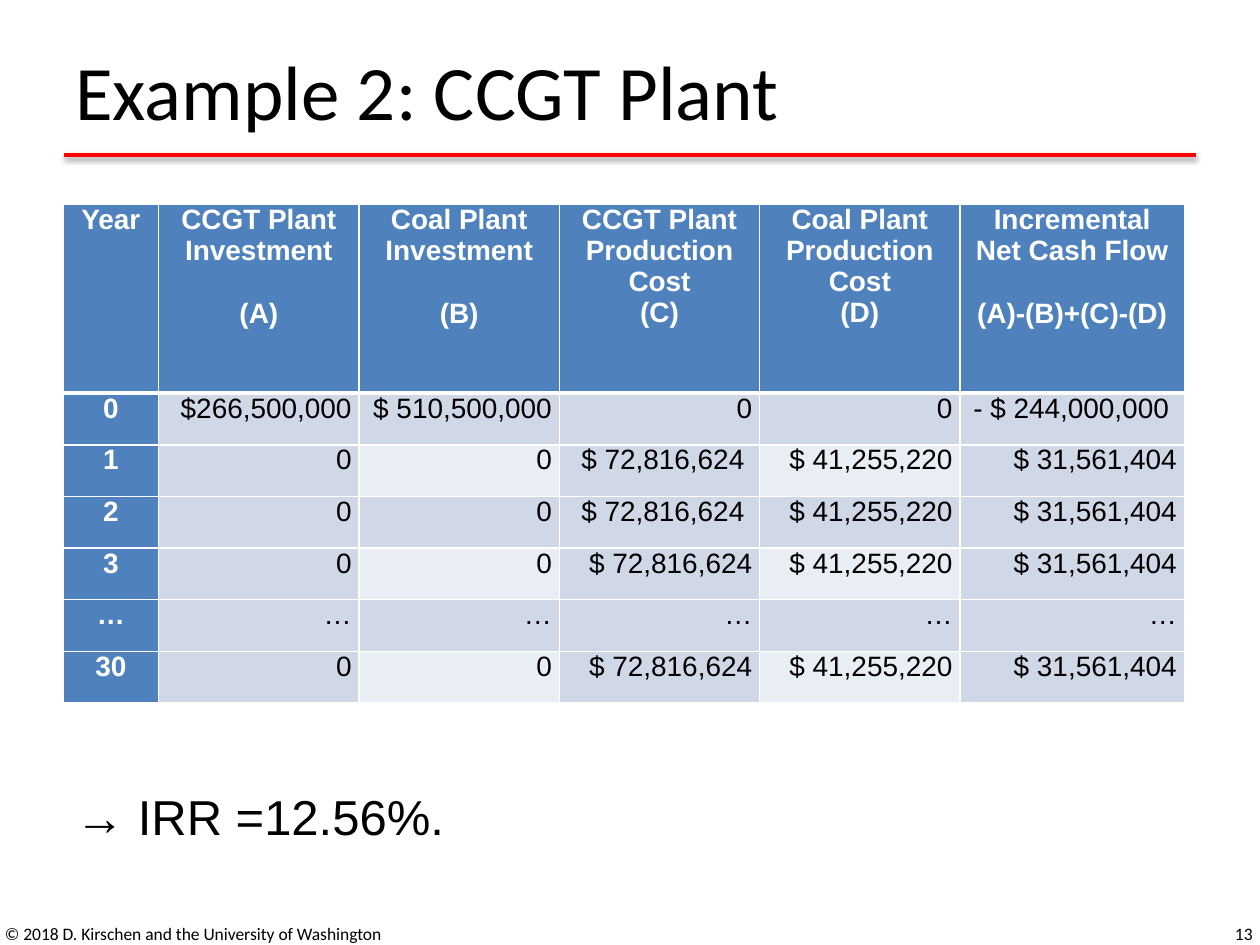
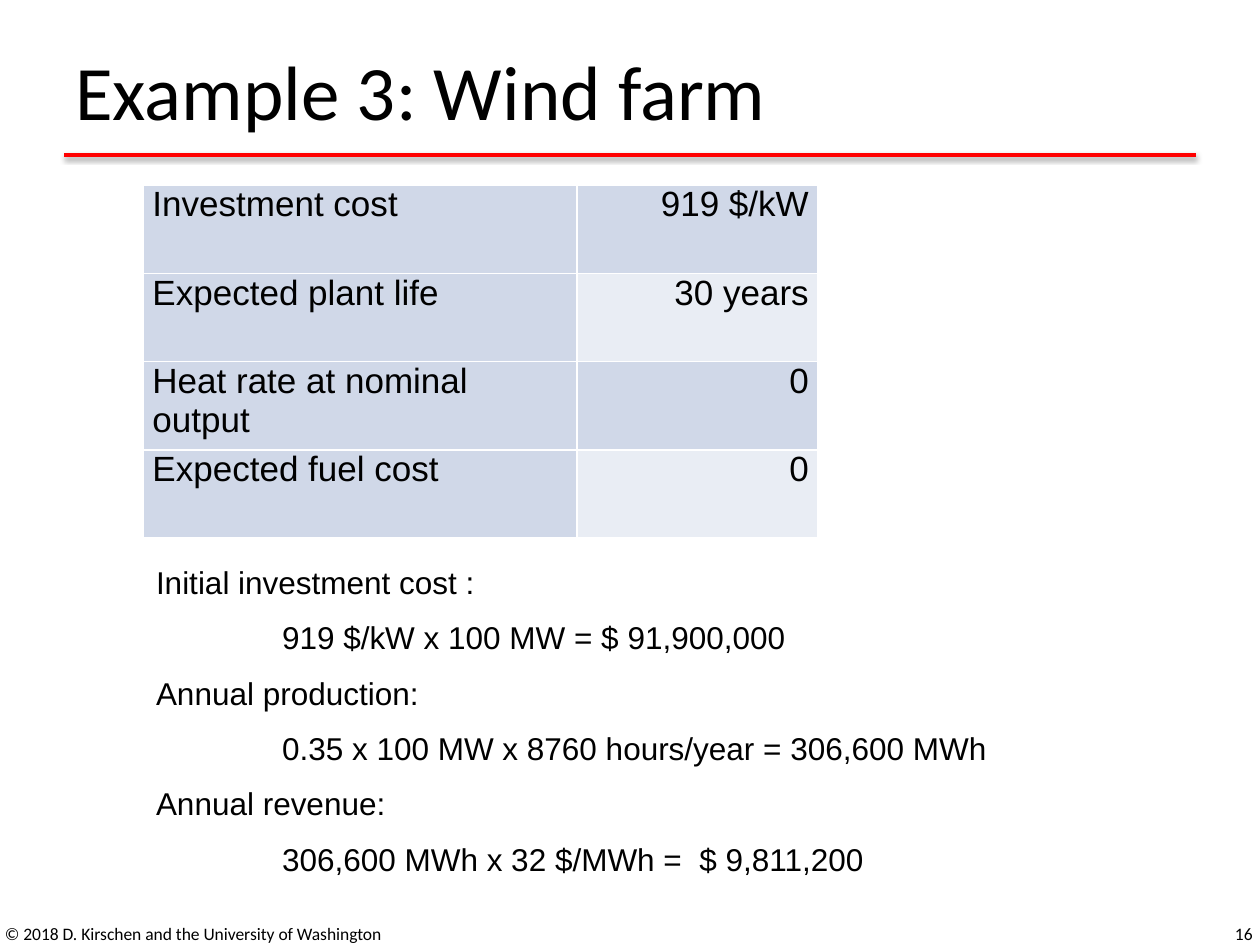
"""Build two slides on investment examples for power plants."""
from dataclasses import dataclass
from typing import NamedTuple

import lxml.etree
import pptx
import pptx.dml.color
import pptx.enum.shapes
import pptx.enum.text
import pptx.oxml
import pptx.oxml.ns
import pptx.util

RGBColor = pptx.dml.color.RGBColor
PP_ALIGN = pptx.enum.text.PP_ALIGN
ANCHOR = pptx.enum.text.MSO_ANCHOR

BLACK = RGBColor(0x00, 0x00, 0x00)
WHITE = RGBColor(0xFF, 0xFF, 0xFF)
RED = RGBColor(0xFF, 0x00, 0x00)
BLUE = RGBColor(0x4F, 0x81, 0xBD)
BAND_DARK = RGBColor(0xD0, 0xD8, 0xE8)
BAND_LIGHT = RGBColor(0xE9, 0xED, 0xF4)

HEAD_FONT = "Calibri"
BODY_FONT = "Arial"
EMU_PER_PX = 9144
FOOTER = "© 2018 D. Kirschen and the University of Washington"


class Box(NamedTuple):
    left: int
    top: int
    width: int
    height: int


@dataclass(frozen=True)
class Style:
    size: int
    font: str = BODY_FONT
    color: RGBColor = BLACK
    bold: bool = False
    align: PP_ALIGN = PP_ALIGN.LEFT


@dataclass(frozen=True)
class TableSpec:
    left: int
    top: int
    cols: tuple[int, ...]
    row_heights: tuple[int, ...]
    rows: tuple[tuple[str, ...], ...]
    size: int
    inset: int
    headed: bool = False
    note_gaps: tuple[int, ...] = ()


TITLE_BOX = Box(50, 13, 900, 117)
FOOTER_BOX = Box(-6, 721, 388, 40)
NUMBER_BOX = Box(771, 721, 233, 40)

CASH_FLOW = TableSpec(
    left=50, top=162,
    cols=(76, 159, 159, 159, 159, 178),
    row_heights=(150,) + (41,) * 6,
    rows=(
        ("Year", "CCGT Plant Investment\n(A)", "Coal Plant Investment\n(B)",
         "CCGT Plant Production Cost\n(C)", "Coal Plant Production Cost\n(D)",
         "Incremental Net Cash Flow\n(A)-(B)+(C)-(D)"),
        ("0", "$266,500,000", "$ 510,500,000", "0", "0", "- $ 244,000,000 "),
        ("1", "0", "0", "$ 72,816,624 ", "$ 41,255,220", "$ 31,561,404"),
        ("2", "0", "0", "$ 72,816,624 ", "$ 41,255,220", "$ 31,561,404"),
        ("3", "0", "0", "$ 72,816,624", "$ 41,255,220", "$ 31,561,404"),
        ("…",) * 6,
        ("30", "0", "0", "$ 72,816,624", "$ 41,255,220", "$ 31,561,404"),
    ),
    size=16, inset=6, headed=True, note_gaps=(0, 18, 18, 0, 0, 18),
)

WIND_DATA = TableSpec(
    left=114, top=147, cols=(344, 191), row_heights=(70,) * 4,
    rows=(
        ("Investment cost", "919 $/kW"),
        ("Expected plant life", "30 years"),
        ("Heat rate at nominal output", "0"),
        ("Expected fuel cost", "0"),
    ),
    size=20, inset=7,
)

WIND_STEPS = (
    ("Initial investment cost :", "919 $/kW x 100 MW = $ 91,900,000"),
    ("Annual production:", "0.35 x 100 MW x 8760 hours/year = 306,600 MWh"),
    ("Annual revenue:", "306,600 MWh x 32 $/MWh =  $ 9,811,200"),
)


def px(n: int) -> pptx.util.Emu:
    """Turn px into EMU."""
    return pptx.util.Emu(n * EMU_PER_PX)


def format_text(tf, style: Style) -> None:
    """Apply one style to every paragraph of a text frame."""
    for p in tf.paragraphs:
        p.alignment = style.align
        for r in p.runs:
            r.font.size = pptx.util.Pt(style.size)
            r.font.name = style.font
            r.font.bold = style.bold
            r.font.color.rgb = style.color


def add_text(slide, box: Box, text: str, style: Style,
             anchor: ANCHOR = ANCHOR.TOP, wrap: bool = True):
    """Add a text box and return its text frame."""
    tf = slide.shapes.add_textbox(*map(px, box)).text_frame
    tf.word_wrap = wrap
    tf.vertical_anchor = anchor
    tf.text = text
    format_text(tf, style)
    return tf


def add_rule(slide) -> None:
    """Draw the red line with its soft shadow under the title."""
    sp = slide.shapes.add_connector(
        pptx.enum.shapes.MSO_CONNECTOR.STRAIGHT, px(51), px(123), px(949), px(123))
    sp.line.color.rgb = RED
    sp.line.width = pptx.util.Pt(2)
    sp._element.spPr.append(pptx.oxml.parse_xml(
        f'<a:effectLst {pptx.oxml.ns.nsdecls("a")}>'
        f'<a:outerShdw blurRad="{pptx.util.Pt(3.1)}" dist="{pptx.util.Pt(1.6)}"'
        ' dir="5400000" rotWithShape="0"><a:srgbClr val="000000">'
        '<a:alpha val="38000"/></a:srgbClr></a:outerShdw></a:effectLst>'))


def add_base(prs, title: str, number: int):
    """Add a blank slide with the title, rule and footers."""
    slide = prs.slides.add_slide(prs.slide_layouts[6])
    add_rule(slide)
    add_text(slide, TITLE_BOX, title, Style(44, HEAD_FONT), ANCHOR.MIDDLE)
    add_text(slide, FOOTER_BOX, FOOTER, Style(10, HEAD_FONT), ANCHOR.MIDDLE)
    add_text(slide, NUMBER_BOX, str(number),
             Style(10, HEAD_FONT, align=PP_ALIGN.RIGHT), ANCHOR.MIDDLE)
    return slide


def set_borders(cell, top: int, bottom: int) -> None:
    """Give a cell white borders, with widths in points."""
    tcPr = cell._tc.get_or_add_tcPr()
    widths = {"lnL": 1, "lnR": 1, "lnT": top, "lnB": bottom}
    for i, (tag, width) in enumerate(widths.items()):
        ln = lxml.etree.Element(pptx.oxml.ns.qn(f"a:{tag}"), w=str(pptx.util.Pt(width)))
        fill = lxml.etree.SubElement(ln, pptx.oxml.ns.qn("a:solidFill"))
        lxml.etree.SubElement(fill, pptx.oxml.ns.qn("a:srgbClr"), val=str(WHITE))
        tcPr.insert(i, ln)


def cell_look(spec: TableSpec, row: int, col: int) -> tuple[Style, RGBColor]:
    """Choose text style and fill from the place of a cell."""
    if spec.headed and (row == 0 or col == 0):
        return Style(spec.size, color=WHITE, bold=True, align=PP_ALIGN.CENTER), BLUE
    light = (row - spec.headed) % 2 and (col - spec.headed) % 2
    align = PP_ALIGN.RIGHT if col else PP_ALIGN.LEFT
    return Style(spec.size, align=align), BAND_LIGHT if light else BAND_DARK


def add_table(slide, spec: TableSpec) -> None:
    """Add a banded table."""
    box = Box(spec.left, spec.top, sum(spec.cols), sum(spec.row_heights))
    table = slide.shapes.add_table(
        len(spec.rows), len(spec.cols), *map(px, box)).table
    table.first_row = table.horz_banding = False
    for column, width in zip(table.columns, spec.cols):
        column.width = px(width)
    for row, height in zip(table.rows, spec.row_heights):
        row.height = px(height)
    for i, texts in enumerate(spec.rows):
        for j, text in enumerate(texts):
            cell = table.cell(i, j)
            style, fill = cell_look(spec, i, j)
            cell.margin_left = cell.margin_right = px(spec.inset)
            cell.margin_top = cell.margin_bottom = 0
            cell.fill.solid()
            cell.fill.fore_color.rgb = fill
            set_borders(cell, 3 if spec.headed and i == 1 else 1,
                        3 if spec.headed and i == 0 else 1)
            tf = cell.text_frame
            tf.text = text
            format_text(tf, style)
            if spec.headed and i == 0:
                for p in tf.paragraphs[1:]:
                    p.space_before = pptx.util.Pt(spec.note_gaps[j])
            else:
                tf.paragraphs[0].space_after = pptx.util.Pt(6)


def add_steps(slide, box: Box, steps: tuple[tuple[str, str], ...]) -> None:
    """Add labels, each followed by an indented calculation."""
    text = "\n".join(line for step in steps for line in step)
    tf = add_text(slide, box, text, Style(18))
    for p in tf.paragraphs[1:]:
        p.space_before = pptx.util.Pt(10)
    for p in tf.paragraphs[1::2]:
        p._p.get_or_add_pPr().set("marL", str(px(100)))


def main() -> None:
    """Build and save the presentation."""
    prs = pptx.Presentation()
    prs.slide_width, prs.slide_height = px(1000), px(750)

    slide = add_base(prs, "Example 2: CCGT Plant", 13)
    add_table(slide, CASH_FLOW)
    add_text(slide, Box(50, 619, 326, 57), "→ IRR =12.56%.", Style(28), wrap=False)

    slide = add_base(prs, "Example 3: Wind farm", 16)
    add_table(slide, WIND_DATA)
    add_steps(slide, Box(114, 442, 803, 313), WIND_STEPS)

    prs.save("out.pptx")


if __name__ == "__main__":
    main()
